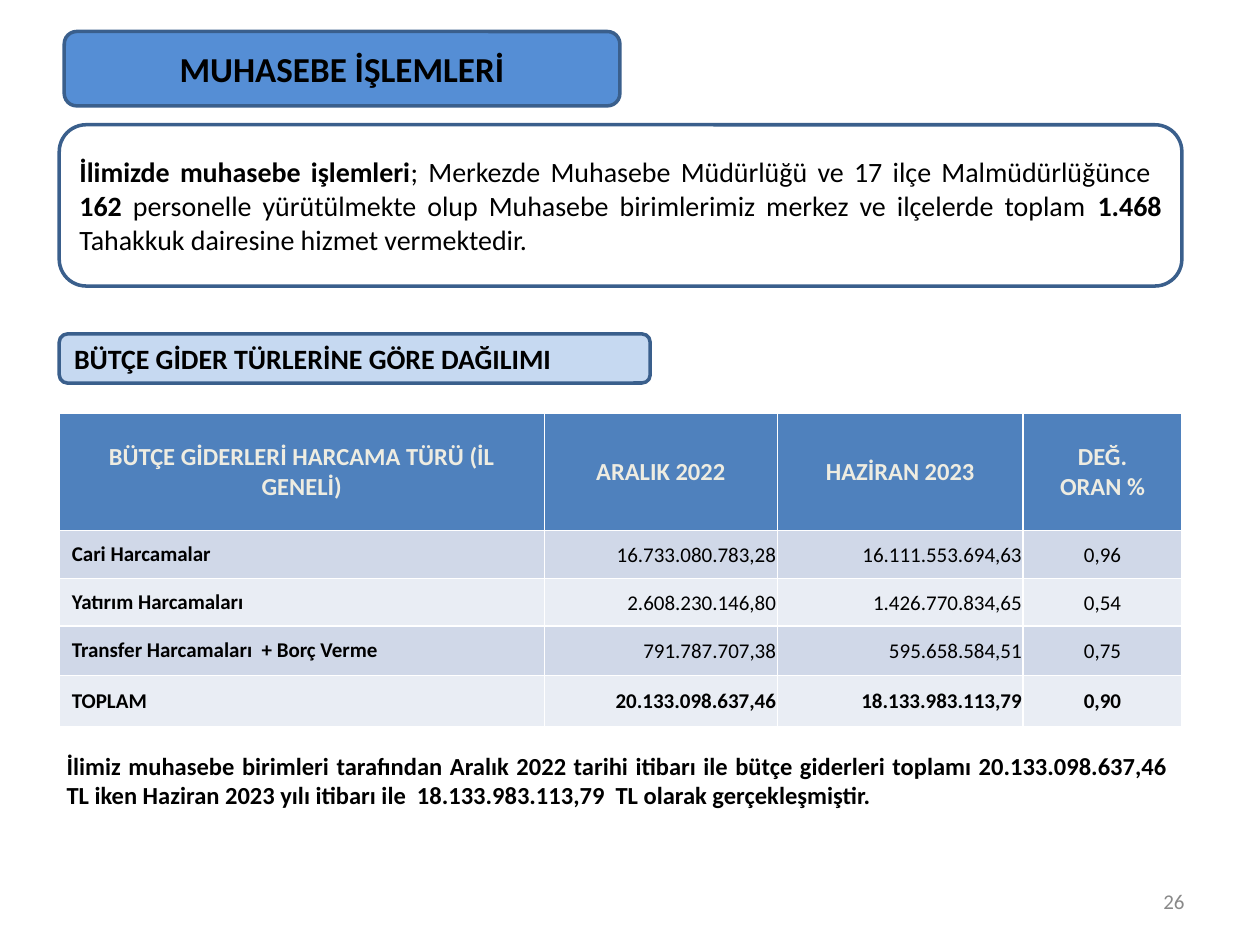
from pptx import Presentation
from pptx import util as u
from pptx.dml.color import RGBColor
from pptx.enum import shapes, text

COLS, ROWS = 100, 75
HUES = {
    "ink": "000000", "edge": "3A5F8C", "title": "558ED5", "label": "C6D9F1",
    "head": "4F81BD", "cream": "EEECE1", "odd": "D0D8E8", "even": "E9EDF4",
    "grey": "898989",
}
ALIGN = {
    "l": text.PP_ALIGN.LEFT, "c": text.PP_ALIGN.CENTER,
    "r": text.PP_ALIGN.RIGHT, "j": text.PP_ALIGN.JUSTIFY,
}
WIDE, TIGHT = (0.1, 0.05, 0.1, 0.05), (0.01, 0.01, 0.01, 0)

INTRO = (
    "*İlimizde muhasebe işlemleri*; Merkezde Muhasebe Müdürlüğü ve 17 ilçe "
    "Malmüdürlüğünce * 162* personelle yürütülmekte olup Muhasebe birimlerimiz "
    "merkez ve ilçelerde toplam *1.468* Tahakkuk dairesine hizmet vermektedir."
)
CLOSE = (
    "*İlimiz muhasebe birimleri tarafından Aralık 2022 tarihi itibarı ile bütçe "
    "giderleri toplamı 20.133.098.637,46 TL iken Haziran 2023 yılı itibarı ile  "
    "18.133.983.113,79  TL olarak gerçekleşmiştir.*"
)
HEAD = ["*BÜTÇE GİDERLERİ HARCAMA TÜRÜ (İL GENELİ)*", "*ARALIK 2022*",
        "*HAZİRAN 2023*", "*DEĞ.*\n*ORAN %*"]
BODY = [
    ["*Cari Harcamalar*", "16.733.080.783,28", "16.111.553.694,63", "0,96"],
    ["*Yatırım Harcamaları*", "2.608.230.146,80", "1.426.770.834,65", "0,54"],
    ["*Transfer Harcamaları  + Borç Verme*", "791.787.707,38", "595.658.584,51", "0,75"],
    ["*TOPLAM*", "*20.133.098.637,46*", "*18.133.983.113,79*", "*0,90*"],
]


def color(name):
    return RGBColor.from_string(HUES[name])


def write(frame, words, size=16, hue="ink", align="l"):
    for i, line in enumerate(words.split("\n")):
        para = frame.add_paragraph() if i else frame.paragraphs[0]
        para.alignment = ALIGN[align]
        for j, part in enumerate(line.split("*")):
            if part:
                run = para.add_run()
                run.text = part
                font = run.font
                font.name, font.size, font.bold = "Calibri", u.Pt(size), j % 2 == 1
                font.color.rgb = color(hue)


class Deck:
    def __init__(self):
        self.prs = Presentation()
        self.prs.slide_width, self.prs.slide_height = u.Inches(10), u.Inches(7.5)
        self.slide = self.prs.slides.add_slide(self.prs.slide_layouts[6])

    def col(self, n):
        return round(self.prs.slide_width * n / COLS)

    def row(self, n):
        return round(self.prs.slide_height * n / ROWS)

    def area(self, x, y, w, h):
        return self.col(x), self.row(y), self.col(w), self.row(h)

    def panel(self, area, words, fill=None, **fmt):
        box = self.slide.shapes.add_shape(
            shapes.MSO_SHAPE.ROUNDED_RECTANGLE, *self.area(*area))
        box.shadow.inherit = False
        if fill:
            box.fill.solid()
            box.fill.fore_color.rgb = color(fill)
        else:
            box.fill.background()
        box.line.color.rgb = color("edge")
        box.line.width = u.Pt(2)
        box.text_frame.word_wrap = True
        box.text_frame.vertical_anchor = text.MSO_ANCHOR.MIDDLE
        write(box.text_frame, words, **fmt)

    def label(self, area, words, anchor=text.MSO_ANCHOR.TOP, **fmt):
        frame = self.slide.shapes.add_textbox(*self.area(*area)).text_frame
        frame.word_wrap = True
        frame.vertical_anchor = anchor
        write(frame, words, **fmt)

    def cell(self, cell, words, fill, pads, **fmt):
        cell.fill.solid()
        cell.fill.fore_color.rgb = color(fill)
        cell.vertical_anchor = text.MSO_ANCHOR.MIDDLE
        (cell.margin_left, cell.margin_top,
         cell.margin_right, cell.margin_bottom) = map(u.Inches, pads)
        write(cell.text_frame, words, **fmt)

    def table(self, x, y, wide, high, head, body):
        grid = self.slide.shapes.add_table(
            len(high), len(wide), *self.area(x, y, sum(wide), sum(high))).table
        for c, w in enumerate(wide):
            grid.columns[c].width = self.col(w)
        for r, h in enumerate(high):
            grid.rows[r].height = self.row(h)
        for c, words in enumerate(head):
            self.cell(grid.cell(0, c), words, "head", WIDE,
                      size=14, hue="cream", align="c")
        for r, line in enumerate(body, 1):
            for c, words in enumerate(line):
                self.cell(grid.cell(r, c), words, "odd" if r % 2 else "even",
                          TIGHT if c else WIDE, size=12, align="lrrc"[c])


def main():
    deck = Deck()
    deck.panel((4.7, 26.5, 46.9, 3.9), "*BÜTÇE GİDER TÜRLERİNE GÖRE DAĞILIMI*", "label")
    deck.table(4.7, 32.8, (38.5, 18.5, 19.5, 12.6), (9.3, 3.8, 3.8, 3.9, 4.1), HEAD, BODY)
    deck.label((4.3, 59.1, 89.4, 5.7), CLOSE, size=14, align="j")
    deck.panel((4.7, 9.9, 89.1, 12.8), INTRO, align="j")
    deck.label((71.7, 69.5, 23.3, 4), "26", text.MSO_ANCHOR.MIDDLE,
               size=12, hue="grey", align="r")
    deck.panel((5.1, 2.5, 44.1, 5.9), "*MUHASEBE İŞLEMLERİ*", "title", size=20, align="c")
    deck.prs.save("out.pptx")


if __name__ == "__main__":
    main()
